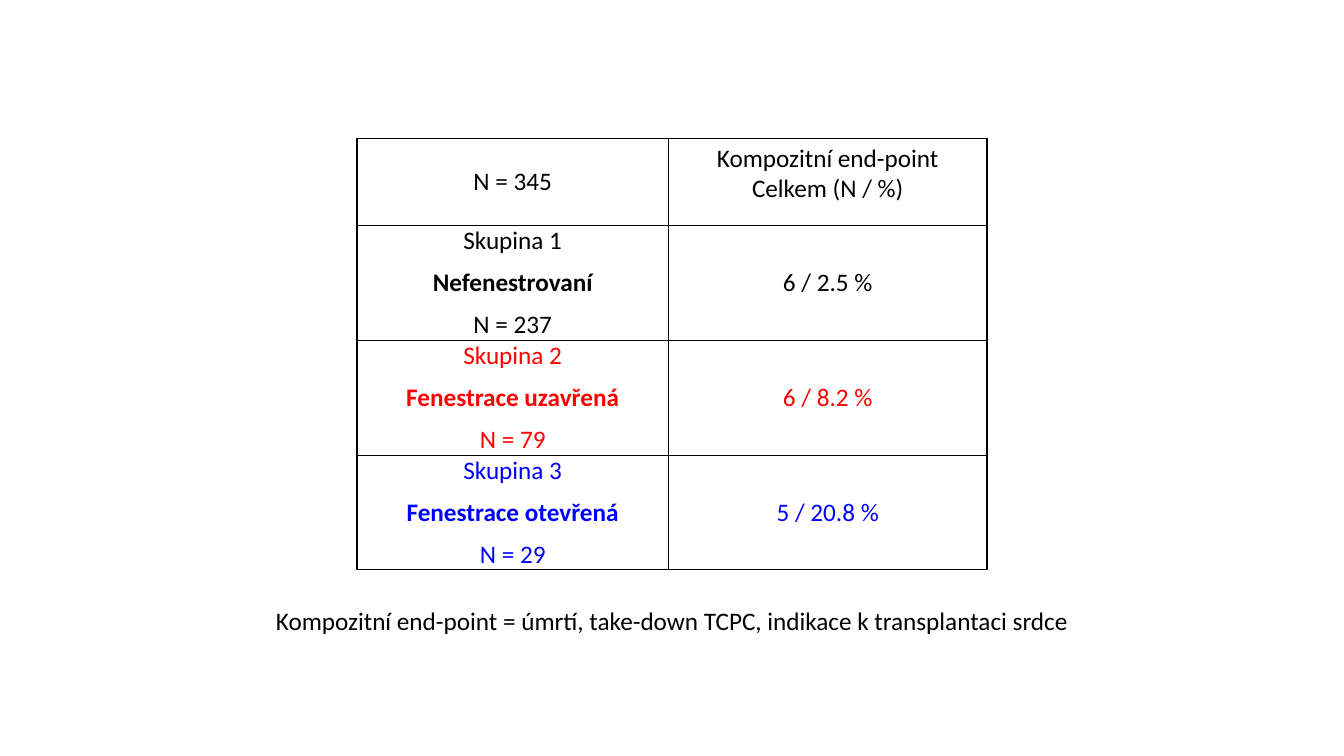
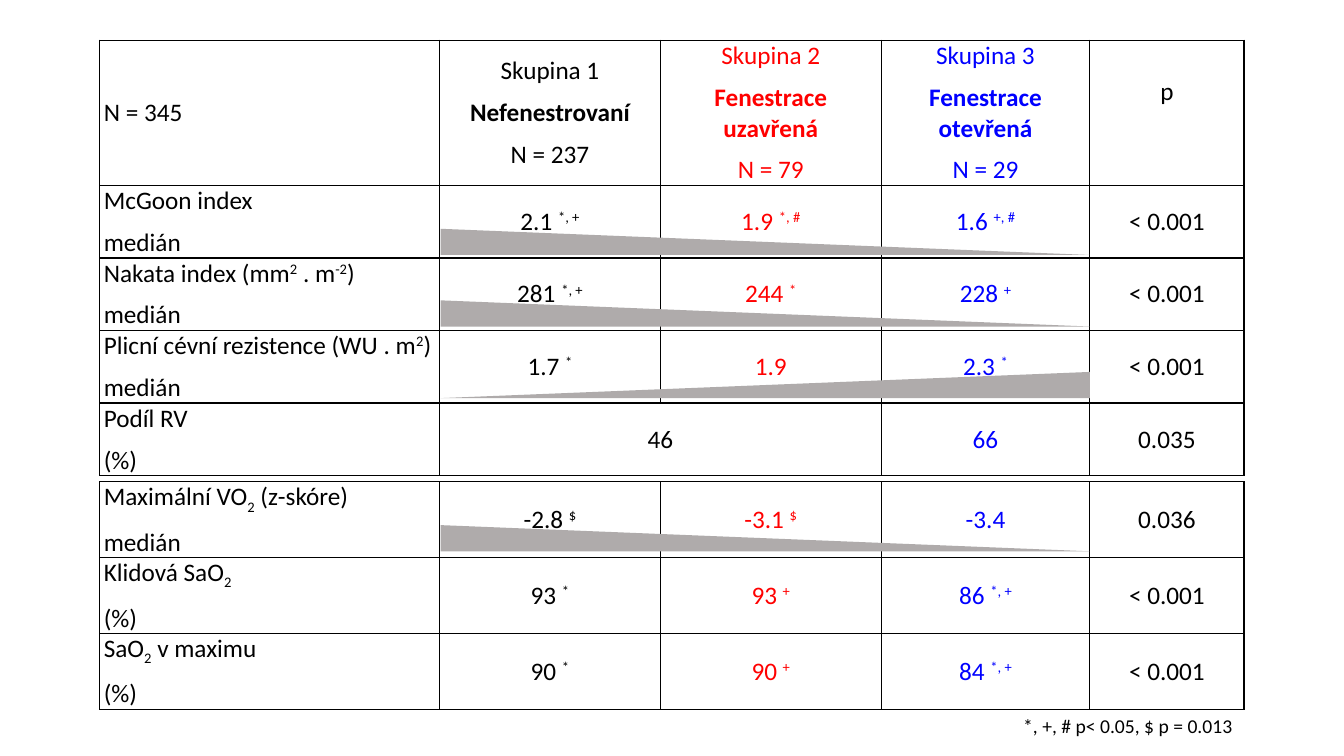
from dataclasses import dataclass

from lxml.etree import SubElement
from pptx import Presentation
from pptx.dml.color import RGBColor as RGB
from pptx.enum.shapes import MSO_SHAPE as SHAPE
from pptx.enum.text import MSO_ANCHOR as ANCHOR, PP_ALIGN as ALIGN
from pptx.oxml.ns import qn
from pptx.util import Inches, Pt


@dataclass(frozen=True)
class Theme:
    font: str = "Calibri"
    body: int = 18
    note: int = 14
    after: int = 8
    line: int = 1
    ink: str = "000000"
    red: str = "FF0000"
    blue: str = "0000FF"
    wedge: str = "AFABAB"


T = Theme()
HUES = (T.ink, T.red, T.blue)
GROUPS = (
    "Skupina 1\n!Nefenestrovaní\nN = 237",
    "Skupina 2\n!Fenestrace uzavřená\nN = 79",
    "Skupina 3\n!Fenestrace otevřená\nN = 29",
)
TOTAL = "N = 345"
SHIFTS = {"^": "30000", "_": "-25000"}


def write(frame, text, size=T.body, hue=T.ink, align=ALIGN.CENTER, after=0):
    """Newlines part paragraphs, | parts runs; a run may open with ! bold, ^ super, _ sub."""
    for i, line in enumerate(text.split("\n")):
        para = frame.add_paragraph() if i else frame.paragraphs[0]
        para.alignment = align
        para.space_after = Pt(after)
        for part in line.split("|"):
            mark = part[0] if part[0] in "!^_" else ""
            run = para.add_run()
            run.text = part[len(mark):]
            font = run.font
            font.name, font.size = T.font, Pt(size)
            font.bold = mark == "!"
            font.color.rgb = RGB.from_string(hue)
            if mark in SHIFTS:
                font._element.set("baseline", SHIFTS[mark])


def label(slide, box, text, wrap=True, **style):
    frame = slide.shapes.add_textbox(*map(Inches, box)).text_frame
    frame.word_wrap = wrap
    write(frame, text, **style)


def pad(cell, side, top=0, base=0):
    cell.margin_left = cell.margin_right = Inches(side)
    cell.margin_top, cell.margin_bottom = Inches(top), Inches(base)


def frame_cell(cell):
    """Draw all four borders and leave the cell unfilled."""
    props = cell._tc.get_or_add_tcPr()
    for side in ("a:lnL", "a:lnR", "a:lnT", "a:lnB"):
        line = SubElement(props, qn(side), w=str(Pt(T.line)))
        fill = SubElement(line, qn("a:solidFill"))
        SubElement(fill, qn("a:srgbClr"), val=T.ink)
    cell.fill.background()


def grid(slide, spot, cols, rows, data, hue, side, left=False):
    """Build a table; hue(row, col) picks the text colour, left aligns column 0."""
    box = (*spot, sum(cols), sum(rows))
    table = slide.shapes.add_table(len(rows), len(cols), *map(Inches, box)).table
    table.first_row = table.horz_banding = False
    for col, width in zip(table.columns, cols):
        col.width = Inches(width)
    for r, (row, height) in enumerate(zip(table.rows, rows)):
        row.height = Inches(height)
        for c, cell in enumerate(row.cells):
            frame_cell(cell)
            cell.vertical_anchor = ANCHOR.MIDDLE
            pad(cell, side)
            if data[r][c]:
                align = ALIGN.LEFT if left and c == 0 else ALIGN.CENTER
                write(cell.text_frame, data[r][c], hue=hue(r, c),
                      align=align, after=T.after)
    return table


def wedge(slide, box, rising=False):
    shape = slide.shapes.add_shape(SHAPE.RIGHT_TRIANGLE, *map(Inches, box))
    shape.shadow.inherit = False
    shape.fill.solid()
    shape.fill.fore_color.rgb = RGB.from_string(T.wedge)
    shape.line.fill.background()
    if rising:
        shape._element.spPr.xfrm.set("flipH", "1")


def outcome(slide, x=3.54, y=1.37):
    """Composite end-point of each group, with its definition below."""
    rates = ("6 / 2.5 %", "6 / 8.2 %", "5 / 20.8 %")
    data = [(TOTAL, "Kompozitní end-point\nCelkem (N / %)"), *zip(GROUPS, rates)]
    table = grid(slide, (x, y), (3.09, 3.16), (0.87, 1.12, 1.12, 1.12), data,
                 lambda r, c: HUES[max(r - 1, 0)], side=0.07)
    head = table.cell(0, 1)
    head.vertical_anchor = ANCHOR.TOP
    pad(head, 0.1, 0.05, 0.05)
    head.text_frame.paragraphs[0].space_after = Pt(0)
    label(slide, (x - 1.15, y + 4.59, 8.55, 0.4),
          "Kompozitní end-point = úmrtí, take-down TCPC, "
          "indikace k transplantaci srdce")


def compare(slide, x=0.99, y=0.4):
    """Two stacked tables of measures by group, with trend wedges."""
    cols = (3.37, 2.19, 2.19, 2.07, 1.53)
    hues = (T.ink, *HUES, T.ink)
    low = "< 0.001"
    style = dict(hue=lambda r, c: hues[c], side=0.04, left=True)
    upper = [
        (TOTAL, *GROUPS, "p"),
        ("McGoon index\nmedián", "2.1 |^*, +", "1.9 |^*, #", "1.6 |^+, #", low),
        ("Nakata index (mm|^2| . m|^-2|)\nmedián",
         "281 |^*, +", "244 |^*", "228 |^+", low),
        ("Plicní cévní rezistence (WU . m|^2|)\nmedián",
         "1.7 |^*", "1.9", "2.3 |^*", low),
        ("Podíl RV\n(%)", "46", "", "66", "0.035"),
    ]
    lower = [
        ("Maximální VO|_2| (z-skóre)\nmedián", "-2.8 |^$", "-3.1 |^$", "-3.4", "0.036"),
        ("Klidová SaO|_2\n(%)", "93 |^*", "93 |^+", "86 |^*, +", low),
        ("SaO|_2| v maximu\n(%)", "90 |^*", "90 |^+", "84 |^*, +", low),
    ]
    table = grid(slide, (x, y), cols, (1.44, *[0.72] * 4), upper, **style)
    table.cell(4, 1).merge(table.cell(4, 2))
    pad(table.cell(0, 4), 0.04, base=0.42)
    label(slide, (x + 9.06, y + 6.63, 2.3, 0.34), "*, +, # p< 0.05, $ p = 0.013",
          wrap=False, size=T.note, align=ALIGN.LEFT)
    grid(slide, (x, y + 4.38), cols, (0.75,) * 3, lower, **style)
    for drop, rising in ((1.87, False), (2.58, False), (3.29, True), (4.81, False)):
        wedge(slide, (x + 3.38, y + drop, 6.44, 0.26), rising)


def main():
    deck = Presentation()
    deck.slide_width, deck.slide_height = Inches(13.33), Inches(7.5)
    blank = deck.slide_layouts[6]
    for build in (outcome, compare):
        build(deck.slides.add_slide(blank))
    deck.save("out.pptx")


if __name__ == "__main__":
    main()
